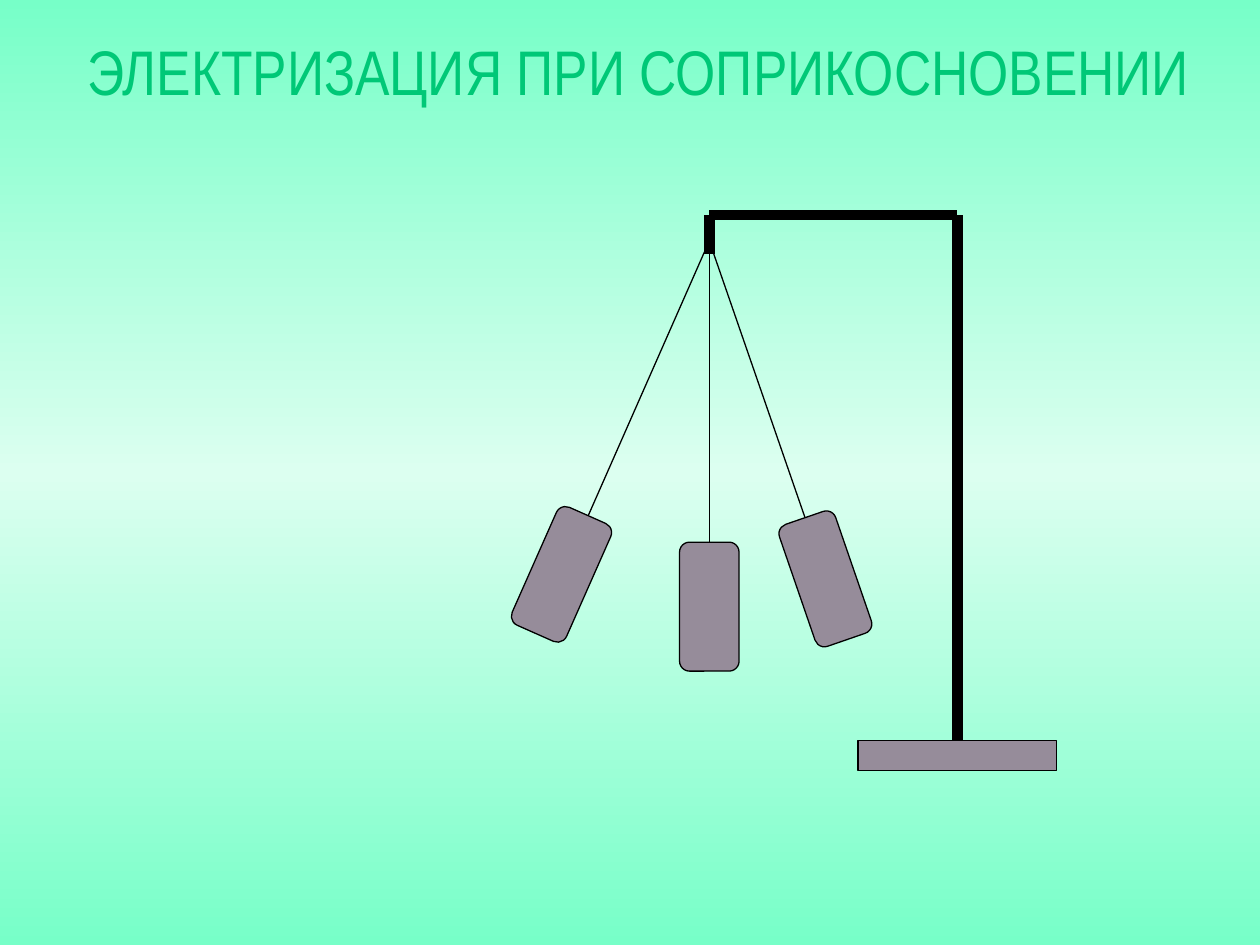
"""Build a slide showing a pendulum on a stand, for electrification by contact."""
import copy

import pptx
import pptx.dml.color
import pptx.enum.shapes
import pptx.enum.text
import pptx.oxml.ns
import pptx.util
from pptx.util import Cm

COLORS = {"edge": "77FFC8", "glow": "DCFFF0", "title": "00C877", "body": "968C9A", "line": "000000"}
RGB = {name: pptx.dml.color.RGBColor.from_string(value) for name, value in COLORS.items()}
SHAPE = pptx.enum.shapes.MSO_SHAPE


def add_line(grp, x1, y1, x2, y2, width):
    ln = grp.shapes.add_connector(
        pptx.enum.shapes.MSO_CONNECTOR.STRAIGHT, Cm(x1), Cm(y1), Cm(x2), Cm(y2))
    ln.line.color.rgb = RGB["line"]
    ln.line.width = pptx.util.Pt(width)
    ln._element.spPr.append(pptx.oxml.parse_xml(f"<a:effectLst {pptx.oxml.ns.nsdecls('a')}/>"))


def add_body(grp, kind, left, top, width, height, rotation=0):
    sp = grp.shapes.add_shape(kind, Cm(left), Cm(top), Cm(width), Cm(height))
    sp.rotation = rotation
    sp.shadow.inherit = False
    sp.fill.solid()
    sp.fill.fore_color.rgb = RGB["body"]
    sp.line.color.rgb = RGB["line"]
    sp.line.width = pptx.util.Pt(0.75)


prs = pptx.Presentation()
prs.slide_width, prs.slide_height = Cm(25.4), Cm(19.05)
s = prs.slides.add_slide(prs.slide_layouts[6])

fill = s.background.fill
fill.gradient()
fill.gradient_angle = 270
gs_list = s.background._cSld.find(".//" + pptx.oxml.ns.qn("a:gsLst"))
gs_list.insert(1, copy.deepcopy(gs_list[0]))
for stop, name, position in zip(fill.gradient_stops, ("edge", "glow", "edge"), (0, 0.5, 1)):
    stop.color.rgb = RGB[name]
    stop.position = position

stand = s.shapes.add_group_shape()
add_body(stand, SHAPE.RECTANGLE, 17.3, 14.93, 4, 0.6)
points = [(19.3, 14.93), (19.3, 4.33), (14.3, 4.33), (14.3, 5.13)]
for start, end in zip(points, points[1:]):
    add_line(stand, *start, *end, 6)

pendulums = [
    ((14.3, 5.13, 14.3, 10.93), (13.7, 10.93), 0),
    ((14.2, 5.08, 11.86, 10.39), (10.72, 10.28), 23.9),
    ((14.33, 4.95, 16.23, 10.44), (16.04, 10.37), 341),
]
for thread, corner, rotation in pendulums:
    grp = s.shapes.add_group_shape()
    add_line(grp, *thread, 0.75)
    add_body(grp, SHAPE.ROUNDED_RECTANGLE, *corner, 1.2, 2.6, rotation)

tb = s.shapes.add_textbox(Cm(1.58), Cm(0.53), Cm(22.6), Cm(1.19))
tf = tb.text_frame
tf.word_wrap = False
tf.margin_left = tf.margin_right = 0
tf.margin_top = Cm(0.13)
tf.text = "ЭЛЕКТРИЗАЦИЯ ПРИ СОПРИКОСНОВЕНИИ"
p = tf.paragraphs[0]
p.alignment = pptx.enum.text.PP_ALIGN.CENTER
r = p.runs[0]
r.font.name = "Arial Narrow"
r.font.size = pptx.util.Pt(36)
r.font.color.rgb = RGB["title"]

prs.save("out.pptx")
